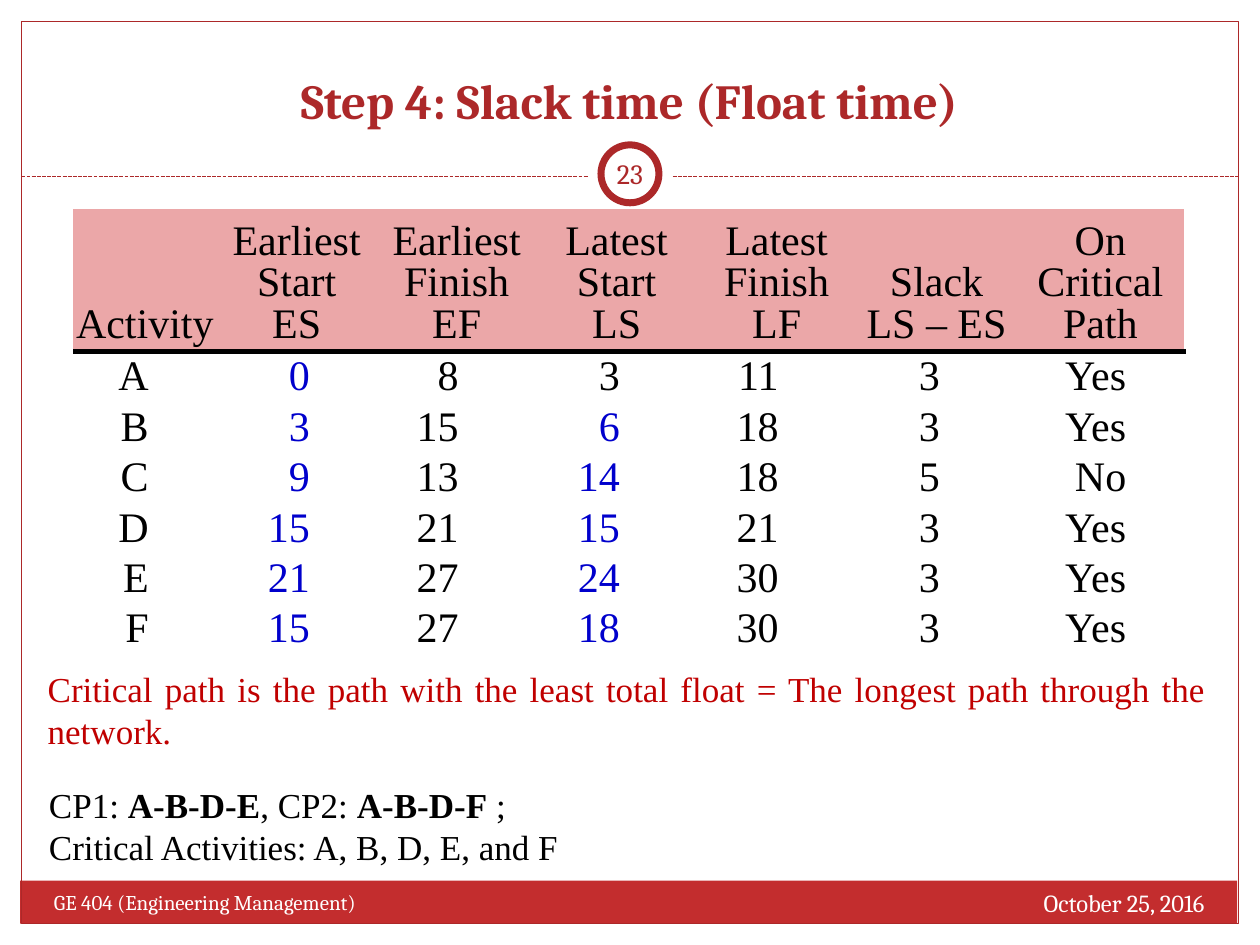
from pptx import Presentation
from pptx.dml.color import RGBColor
from pptx.enum.dml import MSO_LINE
from pptx.enum.shapes import MSO_CONNECTOR, MSO_SHAPE
from pptx.enum.text import MSO_ANCHOR, PP_ALIGN
from pptx.oxml.ns import qn
from pptx.util import Inches, Pt
from lxml import etree

LEFT, CENTER, RIGHT, JUSTIFY = PP_ALIGN.LEFT, PP_ALIGN.CENTER, PP_ALIGN.RIGHT, PP_ALIGN.JUSTIFY
TOP, MIDDLE, BOTTOM = MSO_ANCHOR.TOP, MSO_ANCHOR.MIDDLE, MSO_ANCHOR.BOTTOM
RECT, OVAL = MSO_SHAPE.RECTANGLE, MSO_SHAPE.OVAL
STRAIGHT, DASH = MSO_CONNECTOR.STRAIGHT, MSO_LINE.SQUARE_DOT

HEAD_FONT, BODY_FONT = "Cambria", "Times New Roman"
NO_STYLE_NO_GRID = "{2D5ABB26-0587-4C30-8999-92F81FD0307C}"
COLORS = {
    name: RGBColor.from_string(value)
    for name, value in {
        "white": "FFFFFF", "black": "000000", "band": "C32D2E", "trim": "AC2829",
        "header": "EBA7A8", "blue": "0000CC", "note": "C00000",
    }.items()
}


def add_run(p, text, size, font, color, bold=False):
    r = p.add_run()
    r.text = text
    r.font.size, r.font.name, r.font.bold = Pt(size), font, bold
    r.font.color.rgb = COLORS[color]


prs = Presentation()
prs.slide_width, prs.slide_height = Inches(10), Inches(7.5)
s = prs.slides.add_slide(prs.slide_layouts[6])

# Footer band, page frame, divider and number badge
frame_shapes = [
    (RECT, 0.16, 6.99, 9.66, 0.34, "band", None, 0),
    (RECT, 0.17, 0.17, 9.66, 7.16, None, "trim", 0.75),
    (OVAL, 4.67, 1.05, 0.67, 0.67, "white", None, 0),
    (OVAL, 4.77, 1.15, 0.46, 0.46, "white", "trim", 4),
]
for kind, x, y, w, h, fill, line, weight in frame_shapes:
    sp = s.shapes.add_shape(kind, Inches(x), Inches(y), Inches(w), Inches(h))
    sp.shadow.inherit = False
    if fill:
        sp.fill.solid()
        sp.fill.fore_color.rgb = COLORS[fill]
    else:
        sp.fill.background()
    if line:
        sp.line.color.rgb = COLORS[line]
        sp.line.width = Pt(weight)
    else:
        sp.line.fill.background()
badge = sp

tf = badge.text_frame
tf.margin_left = tf.margin_right = tf.margin_top = tf.margin_bottom = 0
tf.word_wrap = False
tf.vertical_anchor = MIDDLE
tf.paragraphs[0].alignment = CENTER
add_run(tf.paragraphs[0], "23", 16, HEAD_FONT, "trim")

# Activity table: early and late times, slack and criticality
headers = [
    ["Activity"], ["Earliest", "Start", "ES"], ["Earliest", "Finish", "EF"],
    ["Latest", "Start", "LS"], ["Latest", "Finish", "LF"],
    ["Slack", "LS – ES"], ["On", "Critical", "Path"],
]
activities = [
    ("A", 0, 8, 3, 11, 3, "Yes"),
    ("B", 3, 15, 6, 18, 3, "Yes"),
    ("C", 9, 13, 14, 18, 5, "No"),
    ("D", 15, 21, 15, 21, 3, "Yes"),
    ("E", 21, 27, 24, 30, 3, "Yes"),
    ("F", 15, 27, 18, 30, 3, "Yes"),
]
col_widths = [1.14] + [1.27] * 5 + [1.33]
right_margins = [0.54, 0.53, 0.62, 0.61, 0.62, 0.61, 0.46]
ES, LS = 1, 3

table = s.shapes.add_table(len(activities) + 1, len(headers), Inches(0.58), Inches(1.66),
                           Inches(sum(col_widths)), Inches(3.53)).table
table.first_row = table.horz_banding = False
table._tbl.tblPr.find(qn("a:tableStyleId")).text = NO_STYLE_NO_GRID
for col, width in zip(table.columns, col_widths):
    col.width = Inches(width)
for i, row in enumerate(table.rows):
    row.height = Inches(0.4 if i else 1.13)

for c, lines in enumerate(headers):
    cell = table.cell(0, c)
    cell.fill.solid()
    cell.fill.fore_color.rgb = COLORS["header"]
    cell.vertical_anchor = BOTTOM
    cell.margin_left = cell.margin_right = cell.margin_top = 0
    cell.margin_bottom = Inches(0.04)
    for i, line in enumerate(lines):
        p = cell.text_frame.add_paragraph() if i else cell.text_frame.paragraphs[0]
        p.alignment = CENTER
        p.line_spacing = 0.89
        add_run(p, line, 24, BODY_FONT, "black")

for i, activity in enumerate(activities, 1):
    for c, value in enumerate(activity):
        cell = table.cell(i, c)
        cell.fill.background()
        cell.vertical_anchor = MIDDLE
        cell.margin_left = cell.margin_top = cell.margin_bottom = 0
        cell.margin_right = Inches(right_margins[c])
        p = cell.text_frame.paragraphs[0]
        p.alignment = RIGHT
        is_blue = c == ES or (c == LS and activity[0] != "A")
        add_run(p, str(value), 24, BODY_FONT, "blue" if is_blue else "black")

# Divider in two parts beside the badge, and the rule under the table header
rules = [
    (0.17, 4.67, 1.4, "trim", 0.75, DASH),
    (5.34, 9.83, 1.4, "trim", 0.75, DASH),
    (0.58, 9.41, 2.79, "black", 3, None),
]
for x1, x2, y, color, weight, dash in rules:
    rule = s.shapes.add_connector(STRAIGHT, Inches(x1), Inches(y), Inches(x2), Inches(y))
    rule.line.color.rgb = COLORS[color]
    rule.line.width = Pt(weight)
    if dash:
        rule.line.dash_style = dash
    etree.SubElement(rule._element.spPr, qn("a:effectLst"))

# Text boxes: place, anchor, alignment, size, font, colour, paragraphs of (text, bold) runs
texts = [
    (0.33, 0.25, 9.33, 0.83, BOTTOM, CENTER, 28, HEAD_FONT, "trim",
     [[("Step 4: Slack time (Float time)", True)]]),
    (6.33, 7, 3.33, 0.4, TOP, RIGHT, 14, HEAD_FONT, "white", [[("October 25, 2016", False)]]),
    (0.33, 7.01, 3.92, 0.4, TOP, LEFT, 12, HEAD_FONT, "white",
     [[("GE 404 (Engineering Management)", False)]]),
    (0.28, 5.25, 9.39, 0.77, TOP, JUSTIFY, 20, BODY_FONT, "note",
     [[("Critical path is the path with the least total float = "
        "The longest path through the network.", False)]]),
    (0.29, 6.17, 8.49, 0.77, TOP, LEFT, 20, BODY_FONT, "black",
     [[("CP1: ", False), ("A-B-D-E", True), (", CP2: ", False), ("A-B-D-F", True), (" ;", False)],
      [("Critical Activities: A, B, D, E, and F", False)]]),
]
for x, y, w, h, anchor, align, size, font, color, paragraphs in texts:
    tf = s.shapes.add_textbox(Inches(x), Inches(y), Inches(w), Inches(h)).text_frame
    tf.word_wrap = True
    tf.vertical_anchor = anchor
    for i, runs in enumerate(paragraphs):
        p = tf.add_paragraph() if i else tf.paragraphs[0]
        p.alignment = align
        for text, bold in runs:
            add_run(p, text, size, font, color, bold)

prs.save("out.pptx")
